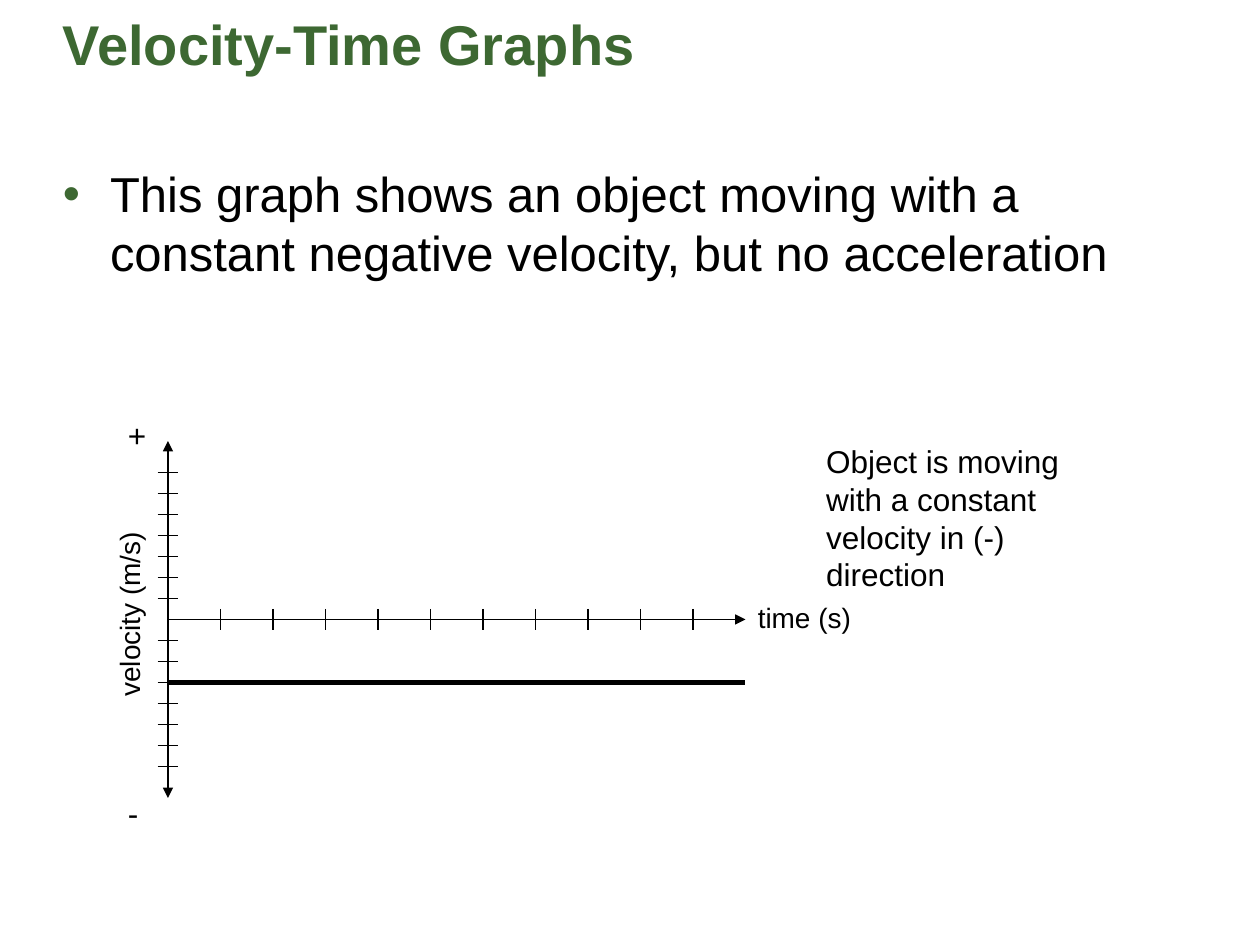
from pptx import Presentation
from pptx.dml.color import RGBColor as Rgb
from pptx.enum.shapes import MSO_CONNECTOR as Link
from pptx.enum.text import PP_ALIGN as Align, MSO_AUTO_SIZE as Auto
from pptx.oxml.ns import qn
from pptx.util import Pt
from lxml.etree import SubElement as Sub

PX = 7620  # EMU per px, 120 px to the inch
INK = {"title": "3D6832", "text": "000000", "line": "000000"}
FONT = "Arial"


def text(slide, words, box, size, color="text", bold=False, align=Align.LEFT,
         turn=0, inset=(12, 6), grow=True, bullet=None):
    """Add a text box; inset is its left and top margin, bullet a (mark, indent) pair."""
    shape = slide.shapes.add_textbox(*(n * PX for n in box))
    shape.rotation = turn
    frame = shape.text_frame
    frame.word_wrap = True
    frame.auto_size = Auto.SHAPE_TO_FIT_TEXT if grow else Auto.NONE
    frame.margin_left, frame.margin_top = (n * PX for n in inset)
    para = frame.paragraphs[0]
    para.alignment = align
    run = para.add_run()
    run.text = words
    font = run.font
    font.name, font.size, font.bold = FONT, Pt(size), bold
    font.color.rgb = Rgb.from_string(INK[color])
    if bullet:
        mark, indent = bullet
        props = para._p.get_or_add_pPr()
        props.set("marL", str(indent * PX))
        props.set("indent", str(-indent * PX))
        Sub(Sub(props, qn("a:buClr")), qn("a:srgbClr"), val=INK["title"])
        Sub(props, qn("a:buFont"), typeface=FONT)
        Sub(props, qn("a:buChar"), char=mark)


def line(slide, start, end, width=0.75, head=False, tail=False):
    """Add a straight line, with an arrow at its start (head) or end (tail)."""
    link = slide.shapes.add_connector(
        Link.STRAIGHT, *(n * PX for n in (*start, *end)))
    link.line.color.rgb = Rgb.from_string(INK["line"])
    link.line.width = Pt(width)
    stroke = link.line._get_or_add_ln()
    for name, shown in (("a:headEnd", head), ("a:tailEnd", tail)):
        if shown:
            Sub(stroke, qn(name), type="triangle")
    Sub(link._element.spPr, qn("a:effectLst"))


def graph(slide, x, y, w, h):
    """Draw velocity against time; x, y, w, h is the box between the axis ends."""
    mid = y + h // 2
    step_x, step_y, half = 50, 20, 10
    line(slide, (x, y), (x, y + h), head=True, tail=True)
    line(slide, (x, mid), (x + w, mid), tail=True)
    for n in range(-7, 8):
        if n:
            at = mid + n * step_y
            line(slide, (x - half, at), (x + half, at))
    for n in range(1, 11):
        at = x + n * step_x
        line(slide, (at, mid - half), (at, mid + half))

    text(slide, "time (s)", (x + w, mid - 24, 120, 44), 16)
    text(slide, "velocity (m/s)", (x - 132, mid - 27, 190, 44), 16,
         align=Align.CENTER, turn=270)
    for sign, top in (("+", y - 30), ("-", y + h - 10)):
        text(slide, sign, (x - 50, top, 50, 48), 18)

    speed = mid + 3 * step_y
    line(slide, (x, speed), (x + w, speed), width=3)


def main():
    deck = Presentation()
    deck.slide_width, deck.slide_height = 1200 * PX, 900 * PX
    slide = deck.slides.add_slide(deck.slide_layouts[6])
    text(slide, "Velocity-Time Graphs", (0, 0, 1200, 76), 32, color="title",
         bold=True, inset=(60, 9), grow=False)
    text(slide, "This graph shows an object moving with a constant negative "
         "velocity, but no acceleration", (48, 150, 1080, 671), 28,
         grow=False, bullet=("•", 45))
    graph(slide, 160, 420, 550, 340)
    text(slide, "Object is moving with a constant velocity in (-) direction",
         (775, 415, 280, 157), 18)
    deck.save("out.pptx")


if __name__ == "__main__":
    main()
